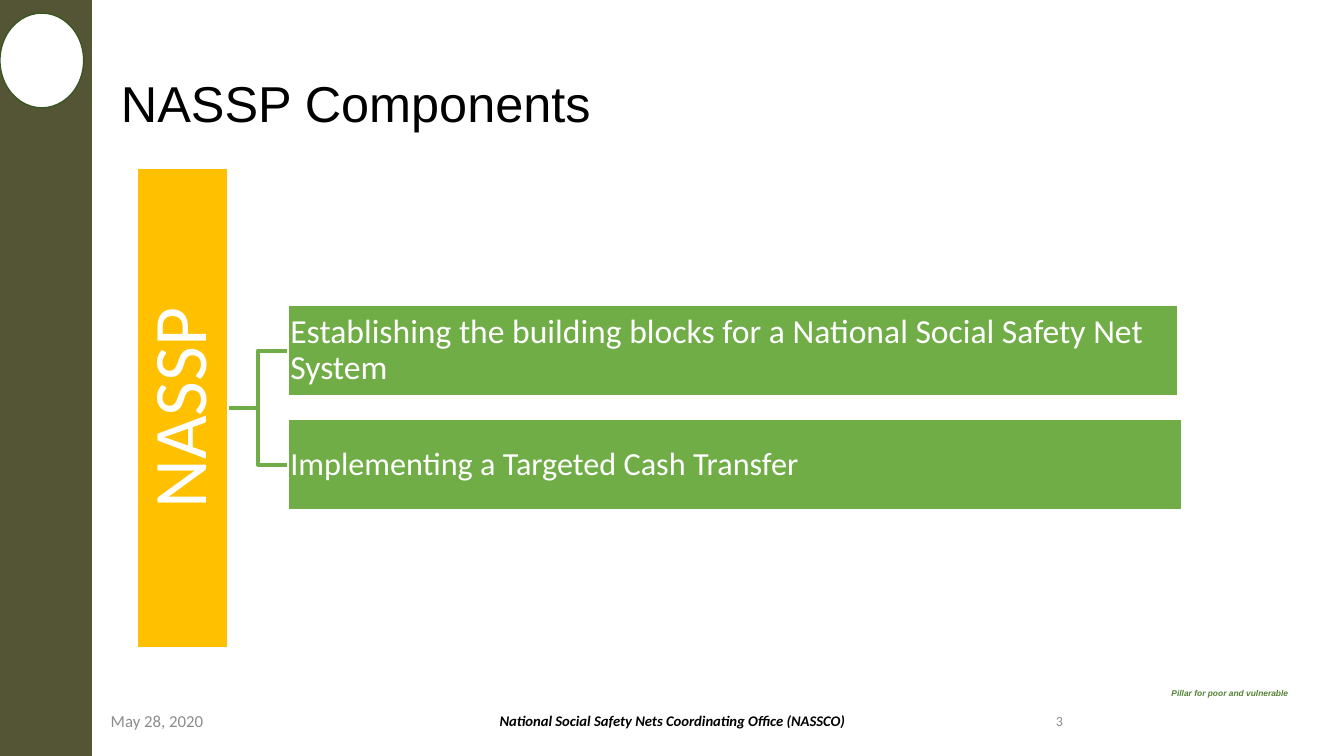
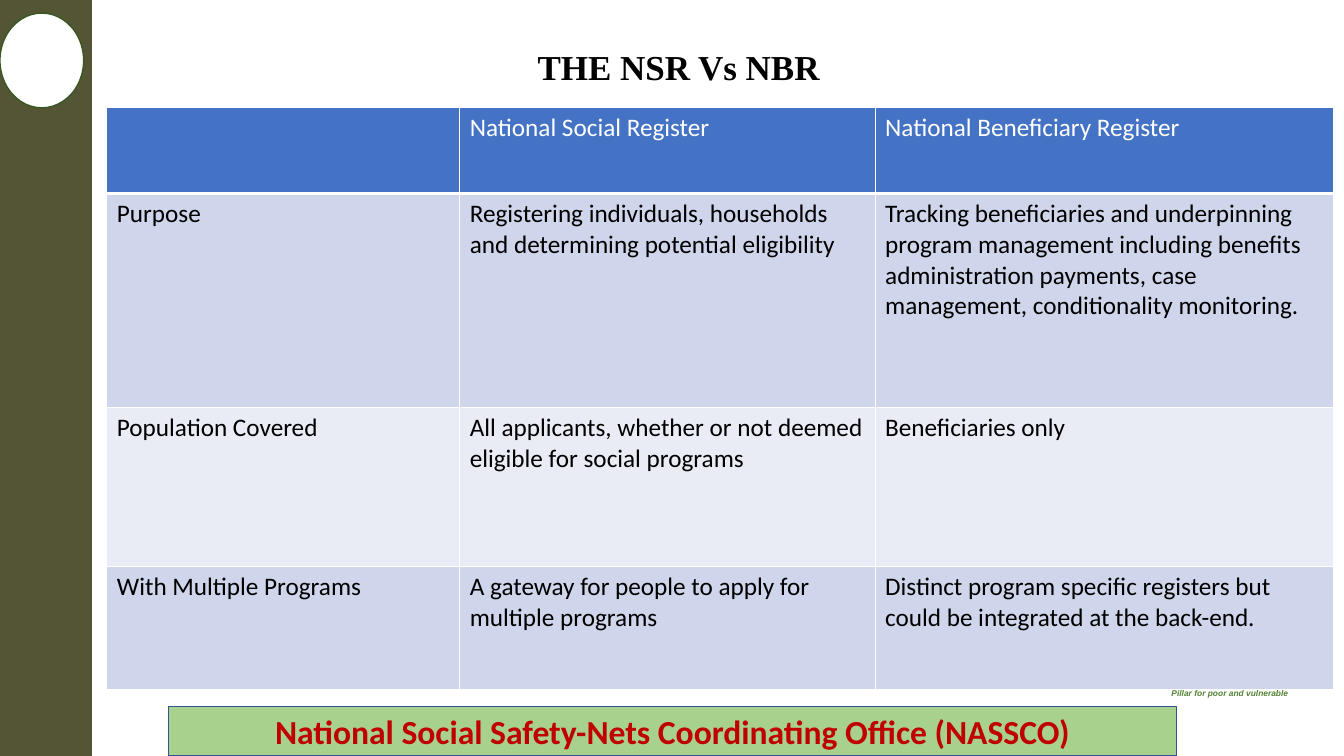
import pptx
import pptx.util
import pptx.dml.color
import pptx.enum.shapes
import pptx.enum.text
import pptx.oxml.ns
from lxml import etree

SHAPE = pptx.enum.shapes.MSO_SHAPE
ALIGN = pptx.enum.text.PP_ALIGN
ANCHOR = pptx.enum.text.MSO_ANCHOR
COLORS = {
    "olive": "535535", "forest": "385723", "moss": "548235",
    "green": "70AD47", "pale_green": "A9D18E", "amber": "FFC000",
    "blue": "4472C4", "navy": "325491", "red": "C00000",
    "row_dark": "CFD5EA", "row_light": "E9EBF5",
    "grey": "8C8C8C", "black": "000000", "white": "FFFFFF",
}
EMU_PER_PX = 9144  # 100 px to the inch
SLIDE_W, SLIDE_H = 1333, 750


def px(n):
    return pptx.util.Emu(n * EMU_PER_PX)


def rgb(name):
    return pptx.dml.color.RGBColor.from_string(COLORS[name])


def add_xml(parent, tag, **attrs):
    return etree.SubElement(parent, pptx.oxml.ns.qn(tag), attrs)


class Deck:
    def __init__(self):
        self.prs = pptx.Presentation()
        self.prs.slide_width, self.prs.slide_height = px(SLIDE_W), px(SLIDE_H)
        self.slide = None

    def new_slide(self):
        """Start a title-only slide with the side band, badge and tagline."""
        self.slide = self.prs.slides.add_slide(self.prs.slide_layouts[5])
        self.text("Pillar for poor and vulnerable", 1152, 678, 181, 20, size=6,
                  color="moss", font="Arial", bold=True, italic=True,
                  anchor=ANCHOR.TOP)
        self.shape(0, 0, 91, SLIDE_H, "olive", "olive")
        self.shape(0, 13, 83, 94, "white", "forest", kind=SHAPE.OVAL)

    def style(self, tf, text, size, color, font="Calibri", bold=False,
              italic=False, align=ALIGN.LEFT, anchor=ANCHOR.MIDDLE,
              spacing=1.0, inset=None):
        tf.text = text
        tf.word_wrap = True
        tf.vertical_anchor = anchor
        if inset is not None:
            tf.margin_left = tf.margin_right = px(inset)
            tf.margin_top = tf.margin_bottom = px(inset)
        p = tf.paragraphs[0]
        p.alignment = align
        p.line_spacing = spacing
        for r in p.runs:
            self.font(r.font, size, color, font, bold, italic)

    def font(self, f, size, color, name="Calibri", bold=False, italic=False):
        f.size, f.name = pptx.util.Pt(size), name
        f.bold, f.italic = bold, italic
        f.color.rgb = rgb(color)

    def title(self, text, x, y, w, h, **look):
        sp = self.slide.shapes.title
        sp.left, sp.top, sp.width, sp.height = map(px, (x, y, w, h))
        self.style(sp.text_frame, text, color="black", **look)
        sp.text_frame.auto_size = pptx.enum.text.MSO_AUTO_SIZE.NONE

    def text(self, text, x, y, w, h, **look):
        sp = self.slide.shapes.add_textbox(*map(px, (x, y, w, h)))
        self.style(sp.text_frame, text, **look)

    def shape(self, x, y, w, h, fill, line, weight=1, kind=SHAPE.RECTANGLE):
        sp = self.slide.shapes.add_shape(kind, *map(px, (x, y, w, h)))
        sp.shadow.inherit = False
        sp.fill.solid()
        sp.fill.fore_color.rgb = rgb(fill)
        sp.line.color.rgb = rgb(line)
        sp.line.width = pptx.util.Pt(weight)
        return sp

    def label_box(self, text, x, y, w, h, fill, line="white", weight=1.5, **look):
        sp = self.shape(x, y, w, h, fill, line, weight)
        self.style(sp.text_frame, text, **look)
        return sp

    def elbow(self, x1, y1, x2, y2, color, weight):
        cxn = self.slide.shapes.add_connector(
            pptx.enum.shapes.MSO_CONNECTOR.ELBOW, *map(px, (x1, y1, x2, y2)))
        cxn.line.color.rgb = rgb(color)
        cxn.line.width = pptx.util.Pt(weight)
        add_xml(cxn.element.spPr, "a:effectLst")
        return cxn

    def table(self, x, y, cols, rows, cells):
        """Draw a table with a header row, banded rows and white rules."""
        frame = self.slide.shapes.add_table(
            len(rows), len(cols), *map(px, (x, y, sum(cols), sum(rows))))
        tbl = frame.table
        for col, w in zip(tbl.columns, cols):
            col.width = px(w)
        for i, (row, h) in enumerate(zip(tbl.rows, rows)):
            row.height = px(h)
            fill = "blue" if i == 0 else ("row_light", "row_dark")[i % 2]
            for cell, text in zip(row.cells, cells[i]):
                self.cell(cell, text, fill, header=i == 0, below_header=i == 1)

    def cell(self, cell, text, fill, header, below_header):
        cell.text = text
        for r in cell.text_frame.paragraphs[0].runs:
            self.font(r.font, 18, "white" if header else "black")
        tc_pr = cell._tc.get_or_add_tcPr()
        for side in "LRTB":
            thick = (header and side == "B") or (below_header and side == "T")
            width = pptx.util.Pt(3 if thick else 1)
            ln = add_xml(tc_pr, "a:ln" + side, w=str(width))
            add_xml(add_xml(ln, "a:solidFill"), "a:srgbClr", val=COLORS["white"])
        cell.fill.solid()
        cell.fill.fore_color.rgb = rgb(fill)


def components_slide(deck):
    deck.new_slide()
    deck.title("NASSP Components", 110, 40, 1150, 97, size=36, font="Arial",
               anchor=ANCHOR.BOTTOM, spacing=0.9)
    root_x, root_y, root_w, root_h = 136, 167, 90, 476
    branch_x, branch_h = 286, 90
    branches = [
        ("Establishing the building blocks for a National Social Safety Net System",
         303, 883, 24),
        ("Implementing a Targeted Cash Transfer", 416, 886, 23),
    ]
    links = [deck.elbow(root_x + root_w, root_y + root_h // 2,
                        branch_x, y + branch_h // 2, "green", 3)
             for _, y, _, _ in branches]
    root = deck.label_box("NASSP", root_x, root_y, root_w, root_h, "amber",
                          size=54, color="white", align=ALIGN.CENTER,
                          spacing=0.9, inset=4)
    root.element.txBody.bodyPr.set("vert", "vert270")
    for link, (text, y, w, size) in zip(links, branches):
        box = deck.label_box(text, branch_x, y, w, branch_h, "green", size=size,
                             color="white", spacing=0.9, inset=2)
        link.begin_connect(root, 3)
        link.end_connect(box, 1)

    footer_y, footer_h = 695, 40
    deck.text("May 28, 2020", 100, footer_y, 300, footer_h, size=12, color="grey")
    deck.text("National Social Safety Nets Coordinating Office (NASSCO)",
              442, footer_y, 450, footer_h, size=10.5, color="black",
              bold=True, italic=True, align=ALIGN.CENTER)
    deck.text("3", 942, footer_y, 122, footer_h, size=10, color="grey",
              align=ALIGN.RIGHT)


def registers_slide(deck):
    deck.new_slide()
    deck.title("THE NSR Vs NBR", 330, 40, 686, 52, size=25,
               font="Times New Roman", bold=True, align=ALIGN.CENTER)
    deck.label_box("National Social Safety-Nets Coordinating Office (NASSCO)",
                   167, 701, 1000, 49, "pale_green", "navy", 1, size=24,
                   color="red", bold=True, align=ALIGN.CENTER)
    deck.table(106, 107, [350, 412, 455], [85, 212, 158, 122], [
        ["", "National Social Register", "National Beneficiary Register"],
        ["Purpose",
         "Registering individuals, households and determining potential eligibility",
         "Tracking beneficiaries and underpinning program management including "
         "benefits administration payments, case management, conditionality "
         "monitoring."],
        ["Population Covered",
         "All applicants, whether or not deemed eligible for social programs",
         "Beneficiaries only"],
        ["With Multiple Programs",
         "A gateway for people to apply for multiple programs",
         "Distinct program specific registers but could be integrated at the "
         "back-end."],
    ])


def main():
    deck = Deck()
    components_slide(deck)
    registers_slide(deck)
    deck.prs.save("out.pptx")


if __name__ == "__main__":
    main()
